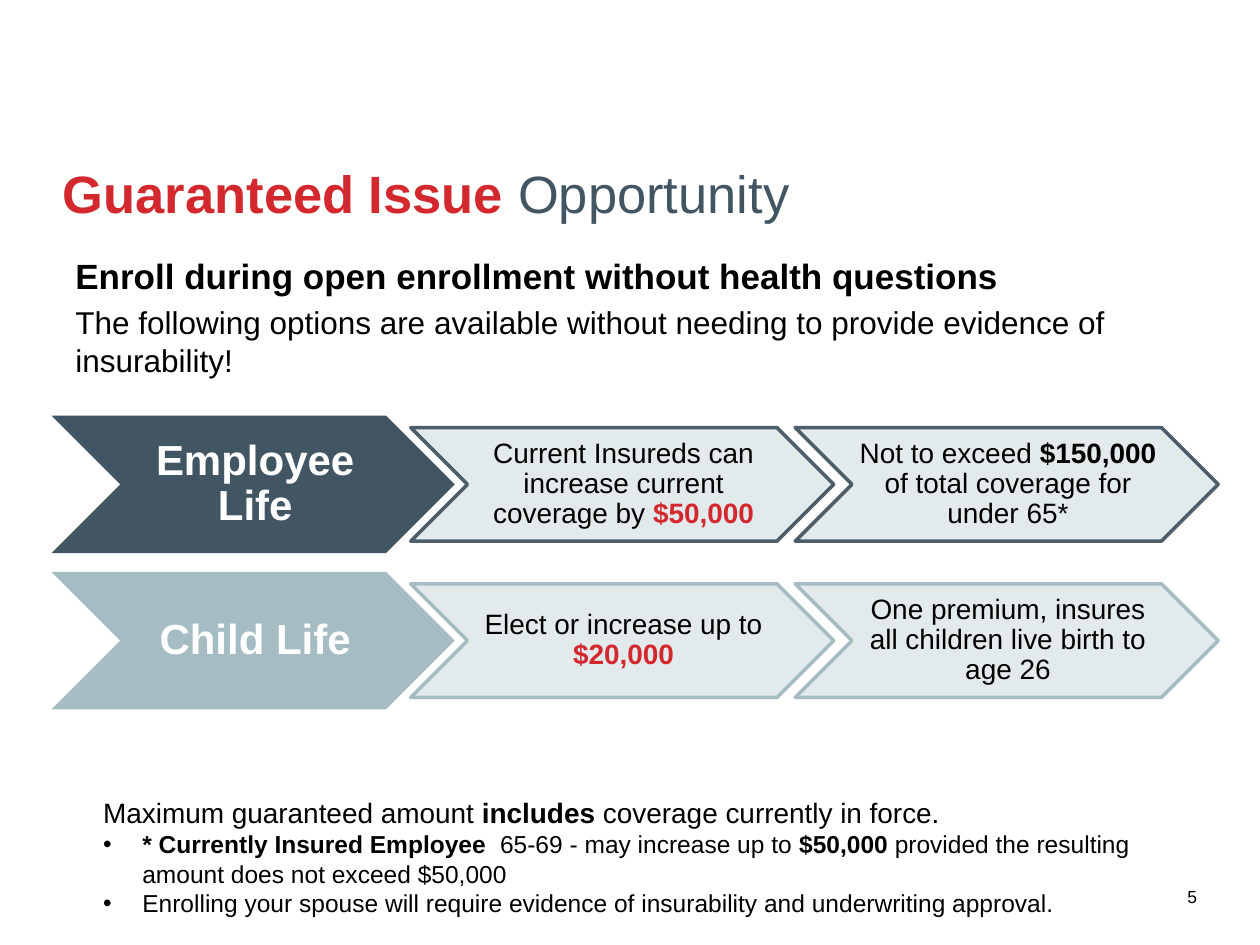
from lxml import etree
from pptx import Presentation
from pptx.dml.color import RGBColor
from pptx.enum.shapes import MSO_SHAPE
from pptx.enum.text import MSO_ANCHOR, PP_ALIGN
from pptx.oxml.ns import qn
from pptx.util import Cm, Pt

CHEVRON = MSO_SHAPE.CHEVRON
MIDDLE = MSO_ANCHOR.MIDDLE
CENTER, RIGHT = PP_ALIGN.CENTER, PP_ALIGN.RIGHT

BLACK, WHITE, RED = "000000", "FFFFFF", "D2282E"
SLATE, NAVY, EDGE, MIST = "425563", "415563", "3B4E5A", "A4BCC2"

PAD = (0.25, 0.13, 0.25, 0.13)
LEAD_PAD = (0.08, 0.05, 0, 0.05)
STEP_PAD = (0.05, 0.03, 0, 0.03)

# Fill, edge colour, edge opacity, lead label, then the runs of each step
ROWS = [
    (NAVY, EDGE, 90, "Employee Life", [
        [("Current Insureds can increase current coverage by ",),
         ("$50,000", RED, True)],
        [("Not to exceed ",), ("$150,000 ", BLACK, True),
         ("of total coverage for under 65*",)],
    ]),
    (MIST, MIST, 100, "Child Life", [
        [("Elect or increase up to ",), ("$20,000", RED, True)],
        [("One premium, insures all children live birth to age 26",)],
    ]),
]


def color(code):
    return RGBColor.from_string(code)


def fade(fmt, share):
    """Set the opacity, in percent, of a solid fill."""
    tint = fmt._xPr.find(qn("a:solidFill"))[0]
    etree.SubElement(tint, qn("a:alpha")).set("val", str(share * 1000))


def add_box(slide, left, top, width, height, pad=PAD, anchor=None):
    box = slide.shapes.add_textbox(Cm(left), Cm(top), Cm(width), Cm(height))
    frame = box.text_frame
    frame.word_wrap = True
    (frame.margin_left, frame.margin_top,
     frame.margin_right, frame.margin_bottom) = map(Cm, pad)
    if anchor is not None:
        frame.vertical_anchor = anchor
    return frame


def add_runs(para, size, runs):
    """Fill a paragraph from tuples of text, colour and bold."""
    for text, tint, bold in ((*run, BLACK, False)[:3] if len(run) == 1
                             else run for run in runs):
        run = para.add_run()
        run.text = text
        run.font.name = "Arial"
        run.font.size = Pt(size)
        run.font.bold = bold
        run.font.color.rgb = color(tint)


def add_bullet(para):
    props = para._p.get_or_add_pPr()
    props.set("marL", str(Cm(0.79)))
    props.set("indent", str(-Cm(0.79)))
    etree.SubElement(props, qn("a:buFont")).set("typeface", "Arial")
    etree.SubElement(props, qn("a:buChar")).set("char", "•")


def add_arrow(slide, left, top, width, height, fill, edge=None,
              fill_share=100, edge_share=100):
    shape = slide.shapes.add_shape(
        CHEVRON, Cm(left), Cm(top), Cm(width), Cm(height))
    shape.shadow.inherit = False
    shape.fill.solid()
    shape.fill.fore_color.rgb = color(fill)
    fade(shape.fill, fill_share)
    if edge is None:
        shape.line.fill.background()
    else:
        shape.line.width = Pt(2)
        shape.line.fill.solid()
        shape.line.color.rgb = color(edge)
        fade(shape.line.fill, edge_share)


def add_label(slide, left, top, width, height, pad, size, runs):
    """Place text between the notch and the tip of an arrow."""
    frame = add_box(slide, left + height / 2, top, width - height, height,
                    pad, MIDDLE)
    para = frame.paragraphs[0]
    para.alignment = CENTER
    para.line_spacing = 0.9
    add_runs(para, size, runs)


def add_row(slide, top, fill, edge, share, lead, steps):
    area = (1.04, top, 8.13, 2.77)
    add_arrow(slide, *area, fill)
    add_label(slide, *area, LEAD_PAD, 24, [(lead, WHITE, True)])
    for col, runs in enumerate(steps):
        area = (8.28 + 7.75 * col, top + 0.24, 8.53, 2.29)
        add_arrow(slide, *area, MIST, edge, 30, share)
        add_label(slide, *area, STEP_PAD, 16, runs)


def add_head(slide):
    para = add_box(slide, 1.27, 3.38, 22.86, 1.45, (0, 0, 0, 0)).paragraphs[0]
    para.line_spacing = Pt(32)
    add_runs(para, 30, [("Guaranteed Issue ", RED, True),
                        ("Opportunity", SLATE, False)])


def add_intro(slide):
    frame = add_box(slide, 1.27, 5, 22.86, 1.85)
    add_runs(frame.paragraphs[0], 20, [
        ("Enroll during open enrollment without health questions",
         BLACK, True)])
    para = frame.add_paragraph()
    para.space_before = Pt(3.6)
    add_runs(para, 18, [("The following options are available without "
                         "needing to provide evidence of insurability!",)])


def add_notes(slide):
    frame = add_box(slide, 1.83, 15.57, 22.73, 3.99)
    para = frame.paragraphs[0]
    para.line_spacing = 1.5
    add_runs(para, 16, [("Maximum guaranteed amount ",),
                        ("includes", BLACK, True),
                        (" coverage currently in force.",)])
    points = [
        [("* Currently Insured Employee ", BLACK, True),
         (" 65-69 - may increase up to ",),
         ("$50,000 ", BLACK, True),
         ("provided the resulting amount does not exceed $50,000",)],
        [("Enrolling your spouse will require evidence of insurability "
          "and underwriting approval.",)],
    ]
    for runs in points:
        para = frame.add_paragraph()
        add_bullet(para)
        add_runs(para, 14, runs)


def add_number(slide):
    frame = add_box(slide, 21.79, 17.78, 2.34, 1.27, (0, 0.08, 0, 0.25))
    para = frame.paragraphs[0]
    para.alignment = RIGHT
    add_runs(para, 10, [("5",)])


def main():
    deck = Presentation()
    deck.slide_width, deck.slide_height = Cm(25.4), Cm(19.05)
    slide = deck.slides.add_slide(deck.slide_layouts[6])
    add_number(slide)
    add_head(slide)
    add_intro(slide)
    for index, row in enumerate(ROWS):
        add_row(slide, 8.38 + 3.15 * index, *row)
    add_notes(slide)
    deck.save("out.pptx")


if __name__ == "__main__":
    main()
